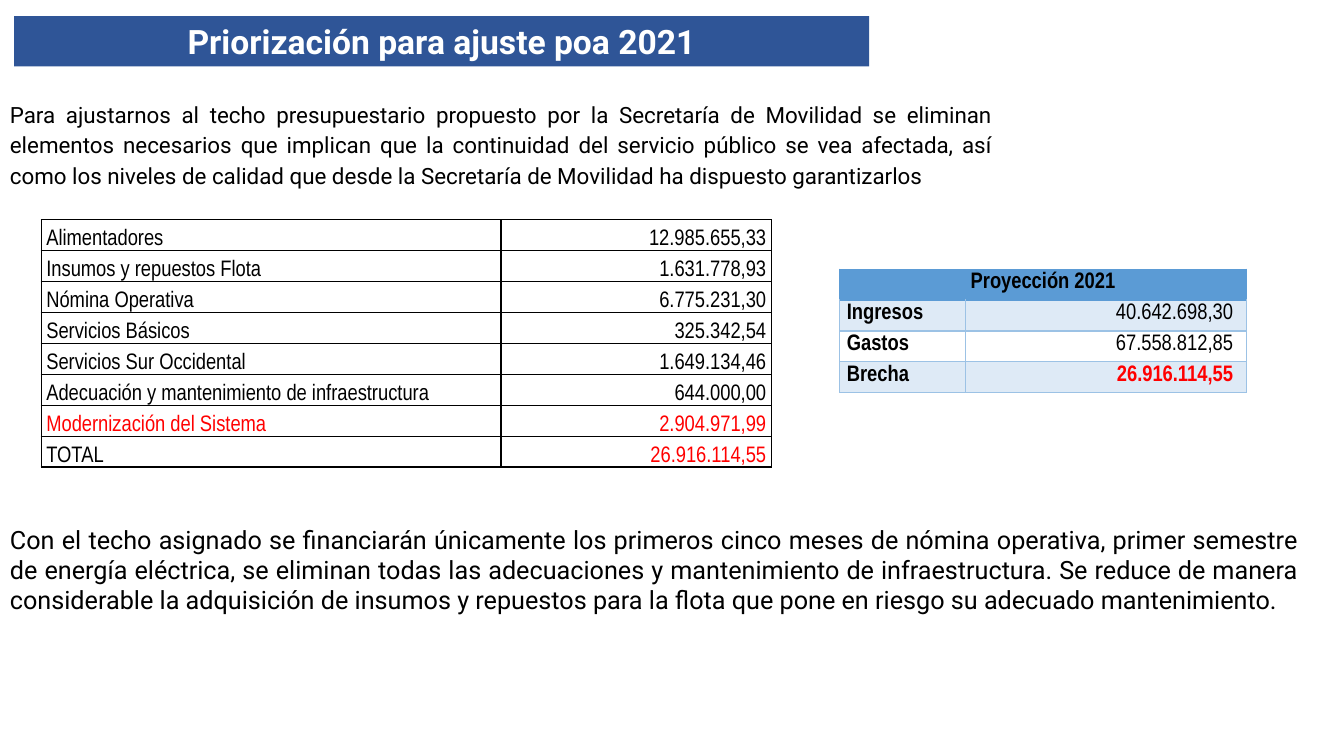
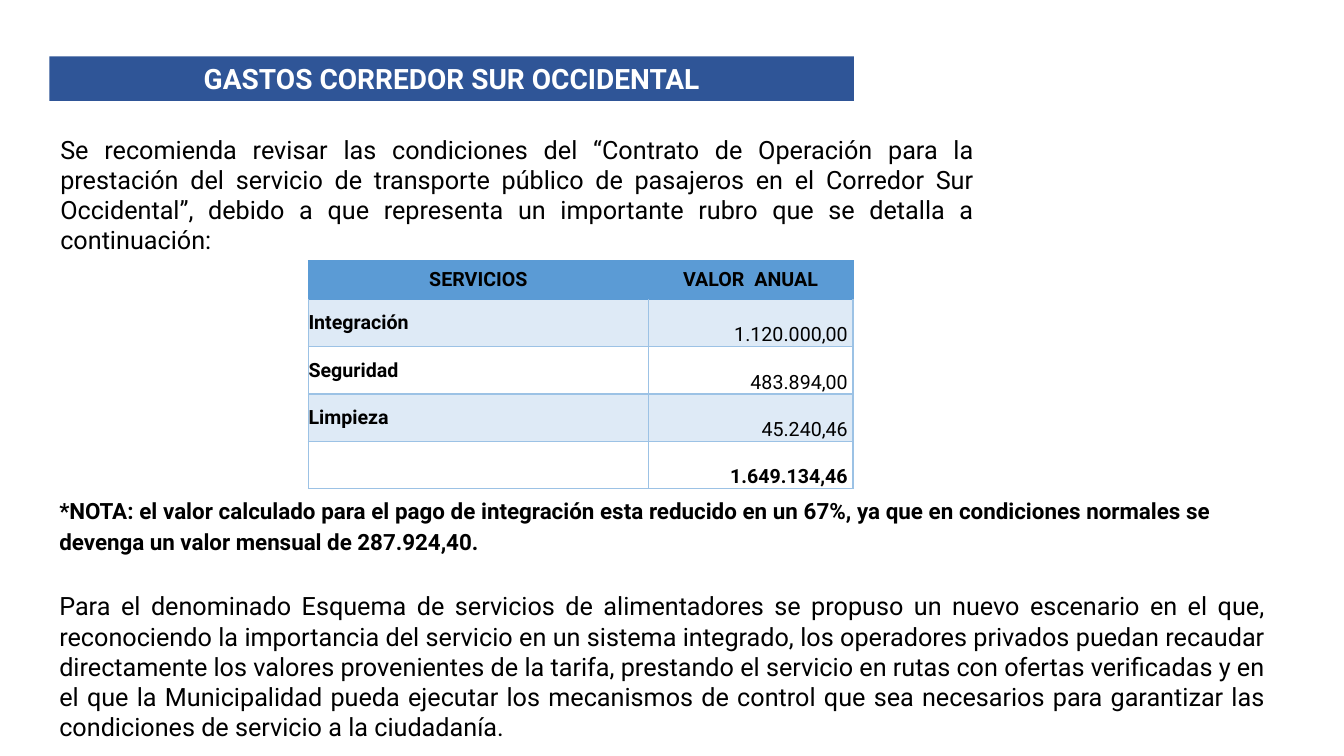
from lxml import etree
from pptx import Presentation
from pptx.dml.color import RGBColor
from pptx.enum.text import MSO_ANCHOR as ANCHOR, MSO_AUTO_SIZE as AUTOSIZE, PP_ALIGN as ALIGN
from pptx.oxml.ns import qn
from pptx.util import Inches, Pt

BAND = RGBColor(0x2F, 0x55, 0x97)
HEADER = RGBColor(0x5B, 0x9B, 0xD5)
STRIPE = RGBColor(0xDE, 0xEA, 0xF6)
EDGE = RGBColor(0x9C, 0xC2, 0xE5)
RED = RGBColor(0xFF, 0, 0)
BLACK = RGBColor(0, 0, 0)
WHITE = RGBColor(0xFF, 0xFF, 0xFF)
SANS, NARROW = "Roboto", "Arial Narrow"

SLIDES = [
    {
        "title": ("Priorización para ajuste poa 2021", (0.14, 0.16, 8.48, 0.5), 24),
        "texts": [
            {"at": (0, 0.91, 9.94, 1.03), "size": 16, "spacing": 1.15,
             "text": "Para ajustarnos al techo presupuestario propuesto por la Secretaría de Movilidad "
                     "se eliminan elementos necesarios que implican que la continuidad del servicio "
                     "público se vea afectada, así como los niveles de calidad que desde la Secretaría "
                     "de Movilidad ha dispuesto garantizarlos"},
            {"at": (0, 5.15, 12.98, 1.01), "size": 18,
             "text": "Con el techo asignado se financiarán únicamente los primeros cinco meses de "
                     "nómina operativa, primer semestre de energía eléctrica, se eliminan todas las "
                     "adecuaciones y mantenimiento de infraestructura. Se reduce de manera considerable "
                     "la adquisición de insumos y repuestos para la flota que pone en riesgo su "
                     "adecuado mantenimiento."},
        ],
        "tables": [
            {"at": (0.41, 2.18), "cols": (4.56, 2.68), "row": 0.3, "font": NARROW, "size": 16,
             "spacing": 1.15, "edge": BLACK, "insets": (0.05, 0.05),
             "anchors": (ANCHOR.BOTTOM, ANCHOR.BOTTOM),
             "red": {(6, 0), (6, 1), (7, 1)},
             "rows": [
                 ("Alimentadores", "12.985.655,33"),
                 ("Insumos y repuestos Flota", "1.631.778,93"),
                 ("Nómina Operativa", "6.775.231,30"),
                 ("Servicios Básicos", "325.342,54"),
                 ("Servicios Sur Occidental", "1.649.134,46"),
                 ("Adecuación y mantenimiento de infraestructura", "644.000,00"),
                 ("Modernización del Sistema", "2.904.971,99"),
                 ("TOTAL", "26.916.114,55"),
             ]},
            {"at": (8.33, 2.67), "cols": (1.25, 2.78), "row": 0.3, "font": NARROW, "size": 16,
             "spacing": 1.15, "edge": EDGE, "insets": (0.07, 0.13),
             "anchors": (ANCHOR.TOP, ANCHOR.TOP),
             "header": ("Proyección 2021",), "header_height": 0.3, "red": {(3, 1)}, "bold": {(3, 1)},
             "rows": [
                 ("Ingresos", "40.642.698,30"),
                 ("Gastos", "67.558.812,85"),
                 ("Brecha", "26.916.114,55"),
             ]},
        ],
    },
    {
        "title": ("GASTOS CORREDOR SUR OCCIDENTAL", (0.49, 0.56, 7.98, 0.44), 20),
        "texts": [
            {"at": (0, 1.28, 9.76, 1.31), "size": 18, "indent": 0.5,
             "text": "Se recomienda revisar las condiciones del “Contrato de Operación para la "
                     "prestación del servicio de transporte público de pasajeros en el Corredor Sur "
                     "Occidental”, debido a que representa un importante rubro que se detalla a "
                     "continuación:"},
            {"at": (0.49, 4.84, 11.62, 0.69), "size": 16, "spacing": 1.15, "bold": True,
             "text": "*NOTA: el valor calculado para el pago de integración esta reducido en un 67%, "
                     "ya que en condiciones normales se devenga un valor mensual de 287.924,40."},
            {"at": (0.49, 5.81, 12.16, 1.62), "size": 18,
             "text": "Para el denominado Esquema de servicios de alimentadores se propuso un nuevo "
                     "escenario en el que, reconociendo la importancia del servicio en un sistema "
                     "integrado, los operadores privados puedan recaudar directamente los valores "
                     "provenientes de la tarifa, prestando el servicio en rutas con ofertas verificadas "
                     "y en el que la Municipalidad pueda ejecutar los mecanismos de control que sea "
                     "necesarios para garantizar las condiciones de servicio a la ciudadanía."},
        ],
        "tables": [
            {"at": (3.06, 2.59), "cols": (3.37, 2.03), "row": 0.47, "font": SANS, "size": 14,
             "edge": EDGE, "insets": (0, 0.05), "anchors": (ANCHOR.MIDDLE, ANCHOR.BOTTOM),
             "header": ("SERVICIOS", "VALOR  ANUAL"), "header_height": 0.38, "bold": {(4, 1)},
             "rows": [
                 ("Integración", "1.120.000,00"),
                 ("Seguridad", "483.894,00"),
                 ("Limpieza", "45.240,46"),
                 ("", "1.649.134,46"),
             ]},
        ],
    },
]


def write(tf, text, size, font=SANS, color=BLACK, bold=False, align=ALIGN.JUSTIFY, spacing=1.0):
    p = tf.paragraphs[0]
    p.alignment, p.line_spacing = align, spacing
    p.font.size = Pt(size)
    if text:
        r = p.add_run()
        r.text = text
        r.font.name, r.font.size, r.font.bold = font, Pt(size), bold
        r.font.color.rgb = color
    return p


def add_title(s, text, at, size):
    sp = s.shapes.title
    sp.left, sp.top, sp.width, sp.height = map(Inches, at)
    sp.fill.solid()
    sp.fill.fore_color.rgb = BAND
    tf = sp.text_frame
    tf.auto_size, tf.vertical_anchor = AUTOSIZE.NONE, ANCHOR.MIDDLE
    write(tf, text, size, color=WHITE, bold=True, align=ALIGN.CENTER)


def add_text(s, at, text, size, indent=0, **style):
    tf = s.shapes.add_textbox(*map(Inches, at)).text_frame
    tf.word_wrap = True
    p = write(tf, text, size, **style)
    if indent:
        p._p.get_or_add_pPr().set("marL", str(Inches(indent)))


def set_borders(cell, colors):
    tcPr = cell._tc.get_or_add_tcPr()
    for side, color in zip("LRTB", colors):
        ln = etree.SubElement(tcPr, qn("a:ln" + side), w=str(Pt(1)))
        fill = etree.SubElement(ln, qn("a:solidFill"))
        etree.SubElement(fill, qn("a:srgbClr"), val=str(color))


def add_table(s, t):
    header = t.get("header")
    rows = ([header] if header else []) + t["rows"]
    heights = [t["header_height"] if header and i == 0 else t["row"] for i in range(len(rows))]
    size = map(Inches, (sum(t["cols"]), sum(heights)))
    table = s.shapes.add_table(len(rows), len(t["cols"]), *map(Inches, t["at"]), *size).table
    table.first_row = table.horz_banding = False
    for col, width in zip(table.columns, t["cols"]):
        col.width = Inches(width)
    for row, height in zip(table.rows, heights):
        row.height = Inches(height)
    if header and len(header) == 1:
        table.cell(0, 0).merge(table.cell(0, 1))
    for i, row in enumerate(rows):
        is_header = bool(header) and i == 0
        edge = HEADER if is_header else t["edge"]
        top = HEADER if header and i <= 1 else edge
        for j in range(len(t["cols"])):
            cell = table.cell(i, j)
            set_borders(cell, (edge, edge, top, edge))
            if header and (is_header or i % 2):
                cell.fill.solid()
                cell.fill.fore_color.rgb = HEADER if is_header else STRIPE
            else:
                cell.fill.background()
            left, right = (0, 0) if is_header else t["insets"]
            cell.margin_left, cell.margin_right = Inches(left), Inches(right)
            cell.margin_top = cell.margin_bottom = 0
            cell.vertical_anchor = t["anchors"][0] if is_header else t["anchors"][j]
            if j < len(row):
                write(cell.text_frame, row[j], t["size"], t["font"],
                      RED if (i, j) in t.get("red", ()) else BLACK,
                      bool(header) and (is_header or j == 0 or (i, j) in t.get("bold", ())),
                      ALIGN.CENTER if is_header else (ALIGN.LEFT, ALIGN.RIGHT)[j],
                      t.get("spacing", 1.0))


def main():
    prs = Presentation()
    prs.slide_width, prs.slide_height = Inches(13.33), Inches(7.5)
    for content in SLIDES:
        s = prs.slides.add_slide(prs.slide_layouts[5])
        add_title(s, *content["title"])
        for text in content["texts"]:
            add_text(s, **text)
        for table in content["tables"]:
            add_table(s, table)
    prs.save("out.pptx")


if __name__ == "__main__":
    main()
